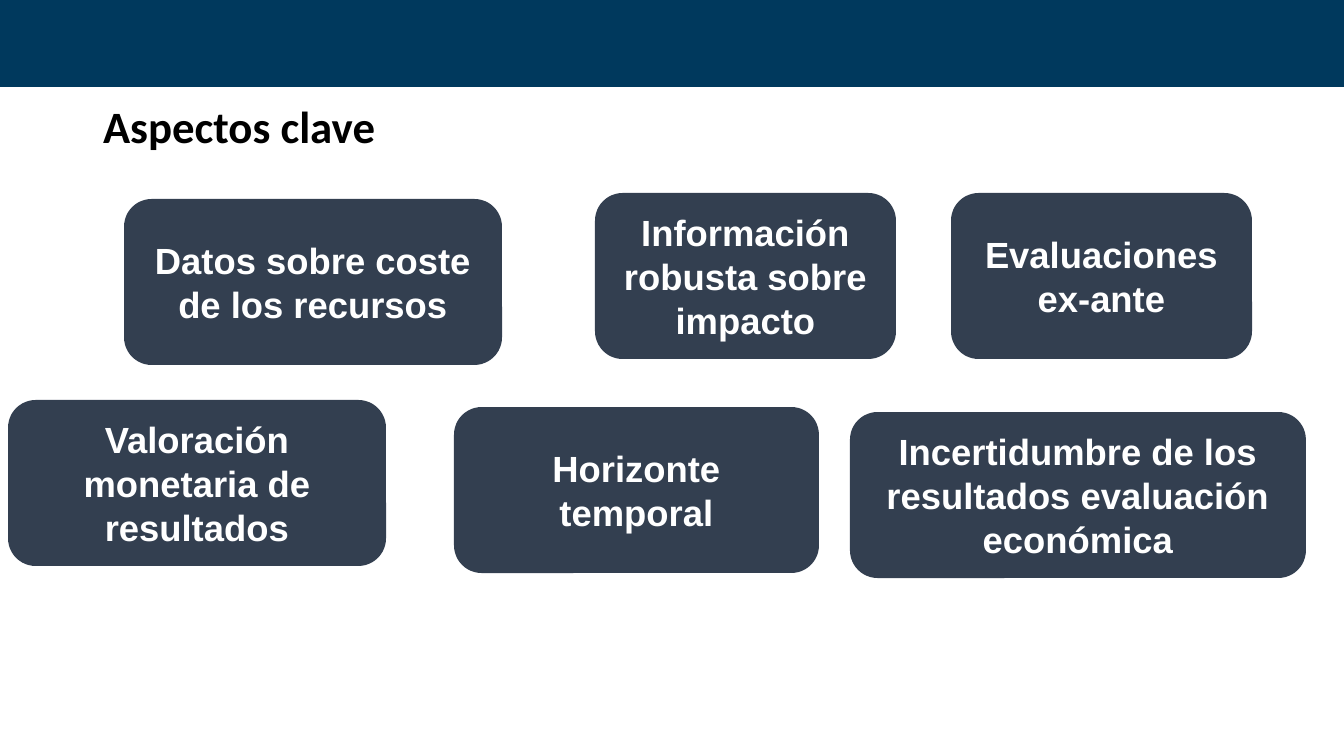
from pptx import Presentation
from pptx.dml.color import RGBColor
from pptx.enum.shapes import MSO_SHAPE as Preset
from pptx.enum.text import MSO_ANCHOR as Anchor, PP_ALIGN as Align
from pptx.util import Pt

NAVY = RGBColor(0x00, 0x39, 0x5D)
SLATE = RGBColor(0x33, 0x3F, 0x50)
WHITE = RGBColor(0xFF, 0xFF, 0xFF)
BLACK = RGBColor(0x00, 0x00, 0x00)

TITLE = "Aspectos clave"
ASPECTS = [
    ("Datos sobre coste de los recursos", 124, 199, 378),
    ("Valoración monetaria de resultados", 8, 400, 378),
    ("Información robusta sobre impacto", 595, 193, 301),
    ("Horizonte temporal", 454, 407, 365),
    ("Incertidumbre de los resultados evaluación económica", 850, 412, 456),
    ("Evaluaciones ex-ante", 951, 193, 301),
]
SLIDE_WIDTH, SLIDE_HEIGHT = 1344, 756
BAND_HEIGHT = 86
ASPECT_HEIGHT = 166
EMU_PER_PX = 914400 / 100.8


def px(*lengths):
    return [round(length * EMU_PER_PX) for length in lengths]


def write(shape, text, font, size, color, align):
    frame = shape.text_frame
    frame.word_wrap = True
    frame.vertical_anchor = Anchor.MIDDLE
    paragraph = frame.paragraphs[0]
    paragraph.alignment = align
    run = paragraph.add_run()
    run.text = text
    run.font.name = font
    run.font.size = Pt(size)
    run.font.bold = True
    run.font.color.rgb = color
    return paragraph


def add_block(slide, preset, box, fill):
    shape = slide.shapes.add_shape(preset, *px(*box))
    shape.shadow.inherit = False
    shape.fill.solid()
    shape.fill.fore_color.rgb = fill
    shape.line.fill.background()
    return shape


def main():
    presentation = Presentation()
    presentation.slide_width, presentation.slide_height = px(SLIDE_WIDTH, SLIDE_HEIGHT)
    slide = presentation.slides.add_slide(presentation.slide_layouts[5])

    title = slide.shapes.title
    title.left, title.top, title.width, title.height = px(93, 75, 1159, 107)
    heading = write(title, TITLE, font="Calibri", size=32, color=BLACK, align=Align.LEFT)
    heading.line_spacing = 0.9

    band = add_block(slide, Preset.RECTANGLE, (0, 0, SLIDE_WIDTH, BAND_HEIGHT), NAVY)
    band.line.color.rgb = NAVY
    band.line.width = Pt(1)
    title.element.addprevious(band.element)

    for text, left, top, width in ASPECTS:
        box = (left, top, width, ASPECT_HEIGHT)
        aspect = add_block(slide, Preset.ROUNDED_RECTANGLE, box, SLATE)
        write(aspect, text, font="Arial", size=26, color=WHITE, align=Align.CENTER)

    presentation.save("out.pptx")


if __name__ == "__main__":
    main()
